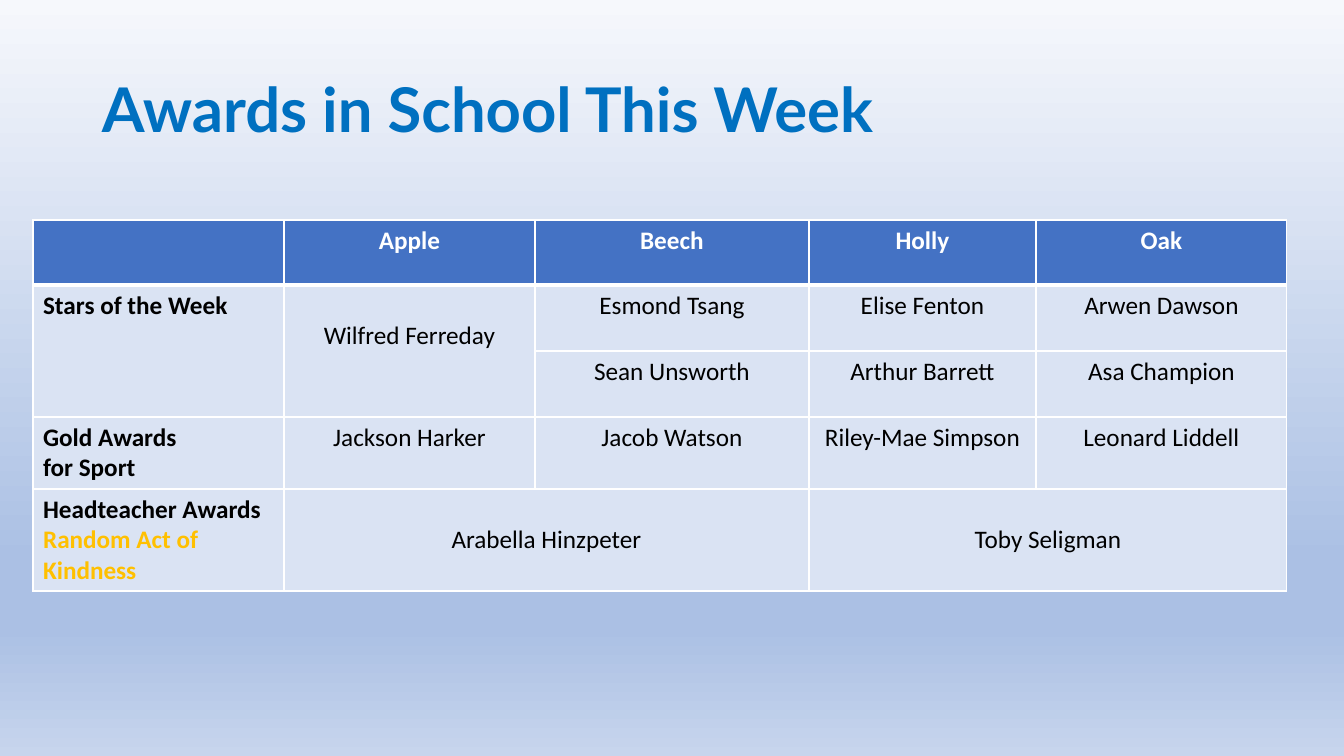
import pptx
import pptx.dml.color
import pptx.enum.text
import pptx.oxml
import pptx.oxml.ns
import pptx.util

PX = 914400 / 100.8
COLORS = {"title": "0070C0", "header": "4472C4", "body": "DAE3F3", "white": "FFFFFF",
          "black": "000000", "gold": "FFC000"}
BACKGROUND_STOPS = [(0, "F6F8FC"), (74, "ABC0E4"), (83, "ABC0E4"), (100, "C7D5ED")]
NS = pptx.oxml.ns.nsdecls("a")
CENTER = pptx.enum.text.PP_ALIGN.CENTER
LEFT = pptx.enum.text.PP_ALIGN.LEFT


def px(n):
    return pptx.util.Emu(round(n * PX))


def rgb(name):
    return pptx.dml.color.RGBColor.from_string(COLORS[name])


class Deck:
    def __init__(self, width, height):
        self.prs = pptx.Presentation()
        self.prs.slide_width, self.prs.slide_height = px(width), px(height)
        self.s = self.prs.slides.add_slide(self.prs.slide_layouts[6])

    def background(self, stops):
        fill = self.s.background.fill
        fill.gradient()
        fill.gradient_angle = 270
        gs_list = self.s.element.find(".//" + pptx.oxml.ns.qn("a:gsLst"))
        for gs in list(gs_list):
            gs_list.remove(gs)
        for pos, color in stops:
            gs_list.append(pptx.oxml.parse_xml(
                f'<a:gs {NS} pos="{pos * 1000}"><a:srgbClr val="{color}"/></a:gs>'))

    def font(self, p, face, size, color, bold):
        p.font.name, p.font.size, p.font.bold = face, pptx.util.Pt(size), bold
        p.font.color.rgb = rgb(color)

    def title(self, text, x, y, w, h):
        tf = self.s.shapes.add_textbox(px(x), px(y), px(w), px(h)).text_frame
        tf.word_wrap = True
        tf.vertical_anchor = pptx.enum.text.MSO_ANCHOR.MIDDLE
        p = tf.paragraphs[0]
        p.text, p.line_spacing = text, 0.9
        self.font(p, "Lato", 44, "title", True)

    def table(self, x, y, widths, heights):
        frame = self.s.shapes.add_table(len(heights), len(widths), px(x), px(y),
                                        px(sum(widths)), px(sum(heights)))
        tbl = frame.table
        tbl.first_row = tbl.horz_banding = False
        for col, w in zip(tbl.columns, widths):
            col.width = px(w)
        for r, (row, h) in enumerate(zip(tbl.rows, heights)):
            row.height = px(h)
            for cell in row.cells:
                self.borders(cell, top=3 if r == 1 else 1, bottom=3 if r == 0 else 1)
                cell.fill.solid()
                cell.fill.fore_color.rgb = rgb("body" if r else "header")
        return tbl

    def borders(self, cell, top, bottom):
        tc_pr = cell._tc.get_or_add_tcPr()
        for side, width in (("L", 1), ("R", 1), ("T", top), ("B", bottom)):
            tc_pr.append(pptx.oxml.parse_xml(
                f'<a:ln{side} {NS} w="{width * 12700}"><a:solidFill>'
                f'<a:srgbClr val="{COLORS["white"]}"/></a:solidFill></a:ln{side}>'))

    def cell_text(self, cell, text, color, bold, align):
        cell.text = text
        for p in cell.text_frame.paragraphs:
            p.alignment = align
            self.font(p, "Calibri", 18, color, bold)


CLASSES = ["Apple", "Beech", "Holly", "Oak"]
LABELS = {1: "Stars of the Week", 3: "Gold Awards\nfor Sport", 4: "Headteacher Awards "}
WINNERS = {
    1: ["Wilfred Ferreday", "Esmond Tsang", "Elise Fenton", "Arwen Dawson"],
    2: [None, "Sean Unsworth", "Arthur Barrett", "Asa Champion"],
    3: ["Jackson Harker", "Jacob Watson", "Riley-Mae Simpson", "Leonard Liddell"],
    4: ["Arabella Hinzpeter", None, "Toby Seligman", None],
}
MERGES = [((1, 0), (2, 0)), ((1, 1), (2, 1)), ((4, 1), (4, 2)), ((4, 3), (4, 4))]
LOWERED = [(1, 1), (4, 1), (4, 3)]


def main():
    deck = Deck(1344, 756)
    deck.background(BACKGROUND_STOPS)
    deck.title("Awards in School This Week", 92, 40, 1159, 146)

    # Table grid
    tbl = deck.table(33, 220, [251, 251, 274, 227, 251], [65, 66, 66, 72, 102])
    for first, last in MERGES:
        tbl.cell(*first).merge(tbl.cell(*last))

    # Class names, award names and winners
    for c, name in enumerate(CLASSES, 1):
        deck.cell_text(tbl.cell(0, c), name, "white", True, CENTER)
    for r, label in LABELS.items():
        deck.cell_text(tbl.cell(r, 0), label, "black", True, LEFT)
    for r, names in WINNERS.items():
        for c, name in enumerate(names, 1):
            if name:
                deck.cell_text(tbl.cell(r, c), name, "black", False, CENTER)

    # Names set one line lower in the merged cells
    for r, c in LOWERED:
        tbl.cell(r, c).margin_top = px(36)

    # Gold part of the headteacher label
    run = tbl.cell(4, 0).text_frame.paragraphs[0].add_run()
    run.text = "Random Act of Kindness"
    run.font.color.rgb = rgb("gold")

    deck.prs.save("out.pptx")


if __name__ == "__main__":
    main()
